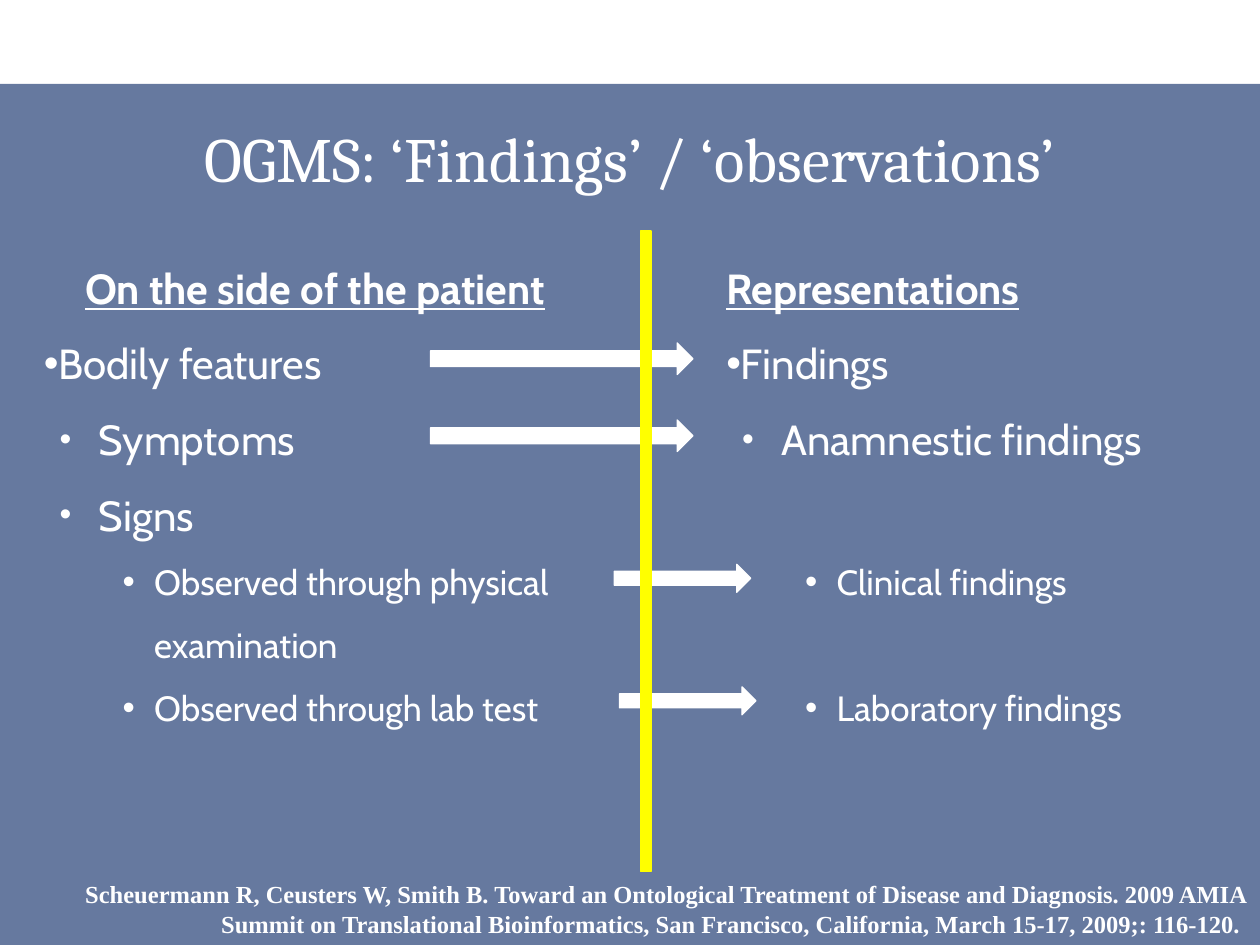
"""Build the slide that pairs patient-side features with their representations."""
from lxml.etree import SubElement
from pptx import Presentation
from pptx.dml.color import RGBColor
from pptx.enum.shapes import MSO_SHAPE as Shape
from pptx.enum.text import MSO_ANCHOR as Anchor, PP_ALIGN as Align
from pptx.oxml.ns import qn
from pptx.util import Pt

WHITE, YELLOW, NAVY = "FFFFFF", "FFFF00", "002060"
HEADING = "heading"
LEVELS = {
    HEADING: dict(size=24, margin=0, indent=0, bullet=None),
    0: dict(size=24, margin=0, indent=-27, bullet=100),
    1: dict(size=24, margin=31.5, indent=-22.5, bullet=80),
    2: dict(size=20, margin=63, indent=-18, bullet=100),
}
PATIENT_SIDE = [
    (HEADING, "On the side of the patient", 0),
    (0, "Bodily features", 0),
    (1, "Symptoms", 0),
    (1, "Signs", 0),
    (2, "Observed through physical examination", 0),
    (2, "Observed through lab test", 0),
]
REPRESENTATIONS = [
    (HEADING, "Representations", 0),
    (0, "Findings", 0),
    (1, "Anamnestic findings", 0),
    (2, "Clinical findings", 43),
    (2, "Laboratory findings", 36),
]
MAPPING_ARROWS = [
    (246, 196, 150, 18),
    (246, 240, 150, 18),
    (351, 322.5, 78, 16),
    (354, 392.5, 78, 16),
]
CITATION = (
    "Scheuermann R, Ceusters W, Smith B. Toward an Ontological Treatment of "
    "Disease and Diagnosis. 2009 AMIA Summit on Translational Bioinformatics, "
    "San Francisco, California, March 15-17, 2009;: 116-120. "
)


def rgb(code):
    """Turn a hex string into a colour."""
    return RGBColor.from_string(code)


class SlideBuilder:
    """Hold the fonts and the current slide."""

    title_font, body_font, citation_font = "Cambria", "Cabin", "Times New Roman"

    def __init__(self, deck):
        """Add a title-only slide to the deck."""
        self.slide = deck.slides.add_slide(deck.slide_layouts[5])

    def set_text(self, paragraph, text, font, size, bold=False, underline=False):
        """Put white text into a paragraph."""
        paragraph.text = text
        for run in paragraph.runs:
            run.font.name, run.font.size = font, Pt(size)
            run.font.bold, run.font.underline = bold, underline
            run.font.color.rgb = rgb(WHITE)

    def block(self, kind, box, fill, line=None):
        """Draw a filled preset shape."""
        block = self.slide.shapes.add_shape(kind, *map(Pt, box))
        block.shadow.inherit = False
        block.fill.solid()
        block.fill.fore_color.rgb = rgb(fill)
        if line:
            block.line.color.rgb = rgb(line)
            block.line.width = Pt(0.75)
        else:
            block.line.fill.background()
        return block

    def backdrop(self, box, fill, opacity):
        """Draw a translucent panel behind everything else."""
        panel = self.block(Shape.RECTANGLE, box, fill)
        tint = panel.element.spPr.find(qn("a:solidFill"))[0]
        SubElement(tint, qn("a:alpha"), val=str(opacity * 1000))
        panel.element.getparent().insert(2, panel.element)

    def title(self, box, text):
        """Place and format the title."""
        title = self.slide.shapes.title
        title.left, title.top, title.width, title.height = map(Pt, box)
        title.text_frame.vertical_anchor = Anchor.MIDDLE
        heading = title.text_frame.paragraphs[0]
        self.set_text(heading, text, self.title_font, 36)
        heading.alignment = Align.CENTER

    def text_frame(self, box):
        """Add a wrapping text box."""
        frame = self.slide.shapes.add_textbox(*map(Pt, box)).text_frame
        frame.word_wrap = True
        return frame

    def outline(self, box, items, heading_align):
        """Add a heading with a multi-level bullet list."""
        frame = self.text_frame(box)
        for number, (level, text, gap) in enumerate(items):
            entry = frame.add_paragraph() if number else frame.paragraphs[0]
            look, is_heading = LEVELS[level], level == HEADING
            self.bullet(entry, look)
            entry.level = 0 if is_heading else level
            entry.alignment = heading_align if is_heading else Align.LEFT
            entry.line_spacing = 1.5
            if gap:
                entry.space_before = Pt(gap)
            self.set_text(entry, text, self.body_font, look["size"], is_heading, is_heading)

    def bullet(self, paragraph, look):
        """Set the indents and bullet of a paragraph."""
        props = paragraph._p.get_or_add_pPr()
        props.set("marL", str(Pt(look["margin"])))
        props.set("indent", str(Pt(look["indent"])))
        if look["bullet"]:
            SubElement(SubElement(props, qn("a:buClr")), qn("a:srgbClr"), val=WHITE)
            SubElement(props, qn("a:buSzPct"), val=str(look["bullet"] * 1000))
            SubElement(props, qn("a:buFont"), typeface="Arial")
            SubElement(props, qn("a:buChar"), char="•")

    def citation(self, box, text):
        """Add the right-aligned source line."""
        source = self.text_frame(box).paragraphs[0]
        self.set_text(source, text, self.citation_font, 14, bold=True)
        source.alignment = Align.RIGHT


def main():
    """Build and save the slide."""
    deck = Presentation()
    deck.slide_width, deck.slide_height = Pt(720), Pt(540)
    builder = SlideBuilder(deck)
    builder.backdrop((0, 48, 720, 492), NAVY, 60)
    builder.title((18, 60, 684, 60), "OGMS: ‘Findings’ / ‘observations’")
    builder.outline((18, 132, 324, 390), PATIENT_SIDE, Align.CENTER)
    builder.outline((408, 132, 294, 390), REPRESENTATIONS, Align.LEFT)
    for box in MAPPING_ARROWS:
        builder.block(Shape.RIGHT_ARROW, box, WHITE, WHITE)
    builder.block(Shape.RECTANGLE, (366, 132, 6, 366), YELLOW, YELLOW)
    builder.citation((0, 499, 720, 41), CITATION)
    deck.save("out.pptx")


if __name__ == "__main__":
    main()
